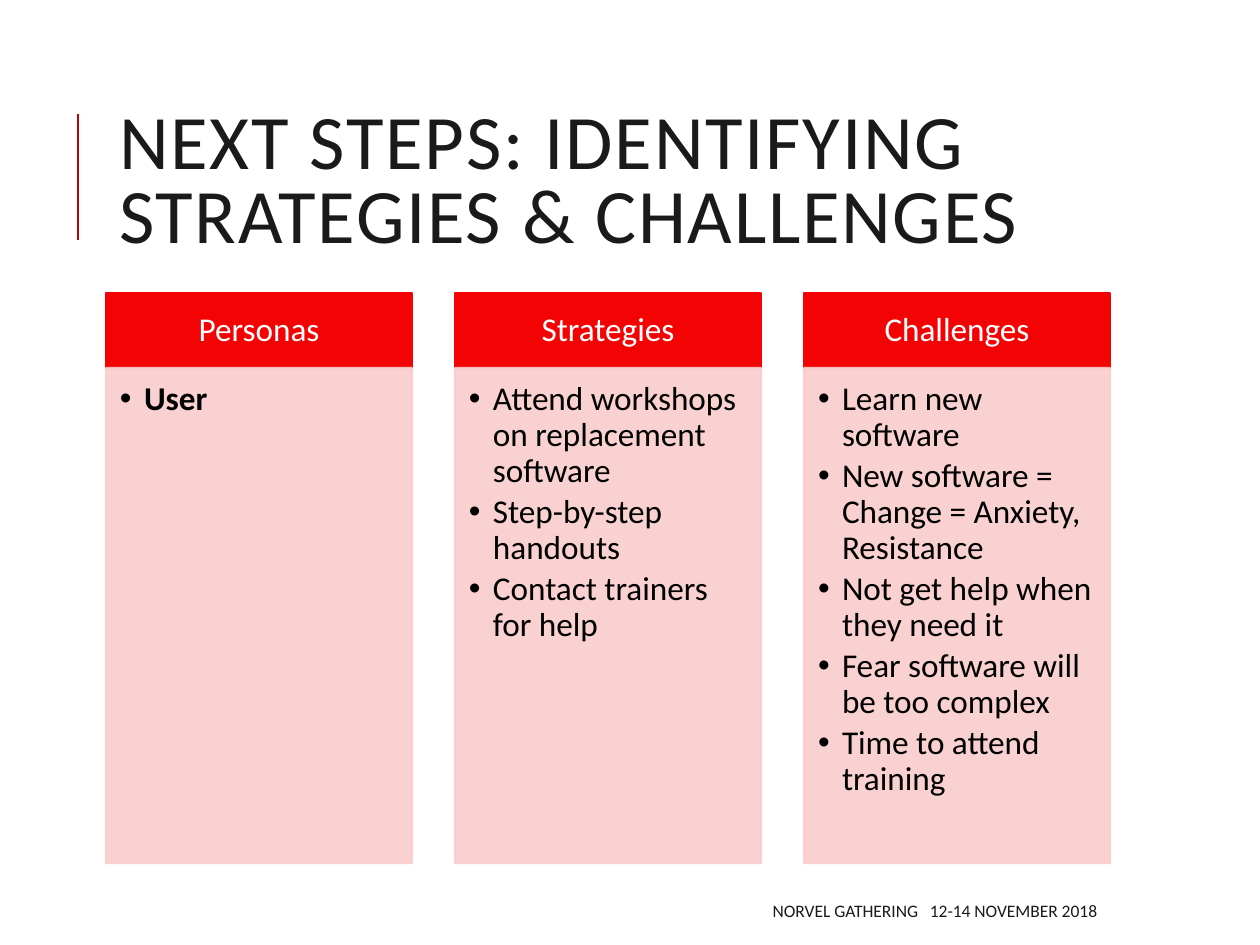
from lxml import etree
from pptx import Presentation
from pptx.dml.color import RGBColor
from pptx.enum.shapes import MSO_CONNECTOR, MSO_SHAPE
from pptx.enum.text import MSO_ANCHOR, PP_ALIGN
from pptx.oxml.ns import qn
from pptx.util import Emu, Pt

LINE, RECT = MSO_CONNECTOR.STRAIGHT, MSO_SHAPE.RECTANGLE
TOP, MIDDLE = MSO_ANCHOR.TOP, MSO_ANCHOR.MIDDLE
LEFT, CENTER, RIGHT = PP_ALIGN.LEFT, PP_ALIGN.CENTER, PP_ALIGN.RIGHT

TITLE = "NEXT STEPS: IDENTIFYING STRATEGIES & CHALLENGES"
FOOTER = ("NORVEL GATHERING", "12-14 NOVEMBER 2018")
COLUMNS = [
    ("Personas", ["User"]),
    ("Strategies", [
        "Attend workshops on replacement software",
        "Step-by-step handouts",
        "Contact trainers for help",
    ]),
    ("Challenges", [
        "Learn new software",
        "New software = Change = Anxiety, Resistance",
        "Not get help when they need it",
        "Fear software will be too complex",
        "Time to attend training",
    ]),
]
BOLD_ITEMS = {"User"}
COLORS = {"accent": "B40404", "header": "F30303", "body": "FACCCC",
          "ink": "1A1A1A", "white": "FFFFFF", "black": "000000"}
FONT = "Calibri"
X, PITCH, COL_W = 106, 349, 306
HEAD_Y, HEAD_H, BODY_H = 293, 75, 495
HEAD_INSETS, BODY_INSETS, TEXT_INSETS = (19, 10, 19, 10), (14, 14, 16, 21), (13, 6, 13, 6)
INDENT = 24


def px(n):
    return Emu(round(n * 914400 / 126))


def rgb(name):
    return RGBColor.from_string(COLORS[name])


def set_frame(sp, anchor, insets):
    tf = sp.text_frame
    tf.word_wrap = True
    tf.vertical_anchor = anchor
    tf.margin_left, tf.margin_top, tf.margin_right, tf.margin_bottom = map(px, insets)
    return tf


def add_text(s, box, anchor=MIDDLE):
    return set_frame(s.shapes.add_textbox(*map(px, box)), anchor, TEXT_INSETS)


def add_box(s, box, color, anchor, insets, alpha=None):
    sp = s.shapes.add_shape(RECT, *map(px, box))
    sp.shadow.inherit = False
    sp.line.width = Pt(1.25)
    for fill in (sp.fill, sp.line.fill):
        fill.solid()
        fill.fore_color.rgb = rgb(color)
    if alpha:
        for clr in sp._element.spPr.iter(qn("a:srgbClr")):
            etree.SubElement(clr, qn("a:alpha"), val=str(alpha * 1000))
    return set_frame(sp, anchor, insets)


def add_run(p, text, size, color, bold=False, spacing=0):
    r = p.add_run()
    r.text = text
    r.font.name, r.font.size, r.font.bold = FONT, Pt(size), bold
    r.font.color.rgb = rgb(color)
    if spacing:
        r._r.get_or_add_rPr().set("spc", str(spacing))


def add_bullet(p):
    pPr = p._p.get_or_add_pPr()
    pPr.set("marL", str(px(INDENT)))
    pPr.set("indent", str(-px(INDENT)))
    etree.SubElement(pPr, qn("a:buFont"), typeface="Arial")
    etree.SubElement(pPr, qn("a:buChar"), char="•")


def add_column(s, x, heading, items):
    tf = add_box(s, (x, HEAD_Y, COL_W, HEAD_H), "header", MIDDLE, HEAD_INSETS)
    p = tf.paragraphs[0]
    p.alignment, p.line_spacing = CENTER, 0.9
    add_run(p, heading, 19, "white")

    tf = add_box(s, (x, HEAD_Y + HEAD_H, COL_W, BODY_H), "body", TOP, BODY_INSETS, 90)
    for i, item in enumerate(items):
        p = tf.add_paragraph() if i else tf.paragraphs[0]
        p.alignment, p.line_spacing, p.space_after = LEFT, 0.9, Pt(3)
        add_bullet(p)
        add_run(p, item, 19, "black", item in BOLD_ITEMS)


def main():
    prs = Presentation()
    prs.slide_width, prs.slide_height = px(1260), px(945)
    s = prs.slides.add_slide(prs.slide_layouts[6])

    rule = s.shapes.add_connector(LINE, px(78), px(240), px(78), px(114))
    rule.line.color.rgb = rgb("accent")
    rule.line.width = Pt(1.5)
    etree.SubElement(rule._element.spPr, qn("a:effectLst"))

    p = add_text(s, (X, 81, 1004, 207)).paragraphs[0]
    p.line_spacing = 0.8
    add_run(p, TITLE, 44, "ink", spacing=100)

    for i, (heading, items) in enumerate(COLUMNS):
        add_column(s, X + i * PITCH, heading, items)

    p = add_text(s, (500, 892, 610, 38)).paragraphs[0]
    p.alignment = RIGHT
    add_run(p, FOOTER[0], 10, "ink")
    add_run(p, " ", 10, "ink", spacing=450)
    add_run(p, FOOTER[1], 10, "ink")

    prs.save("out.pptx")


if __name__ == "__main__":
    main()
